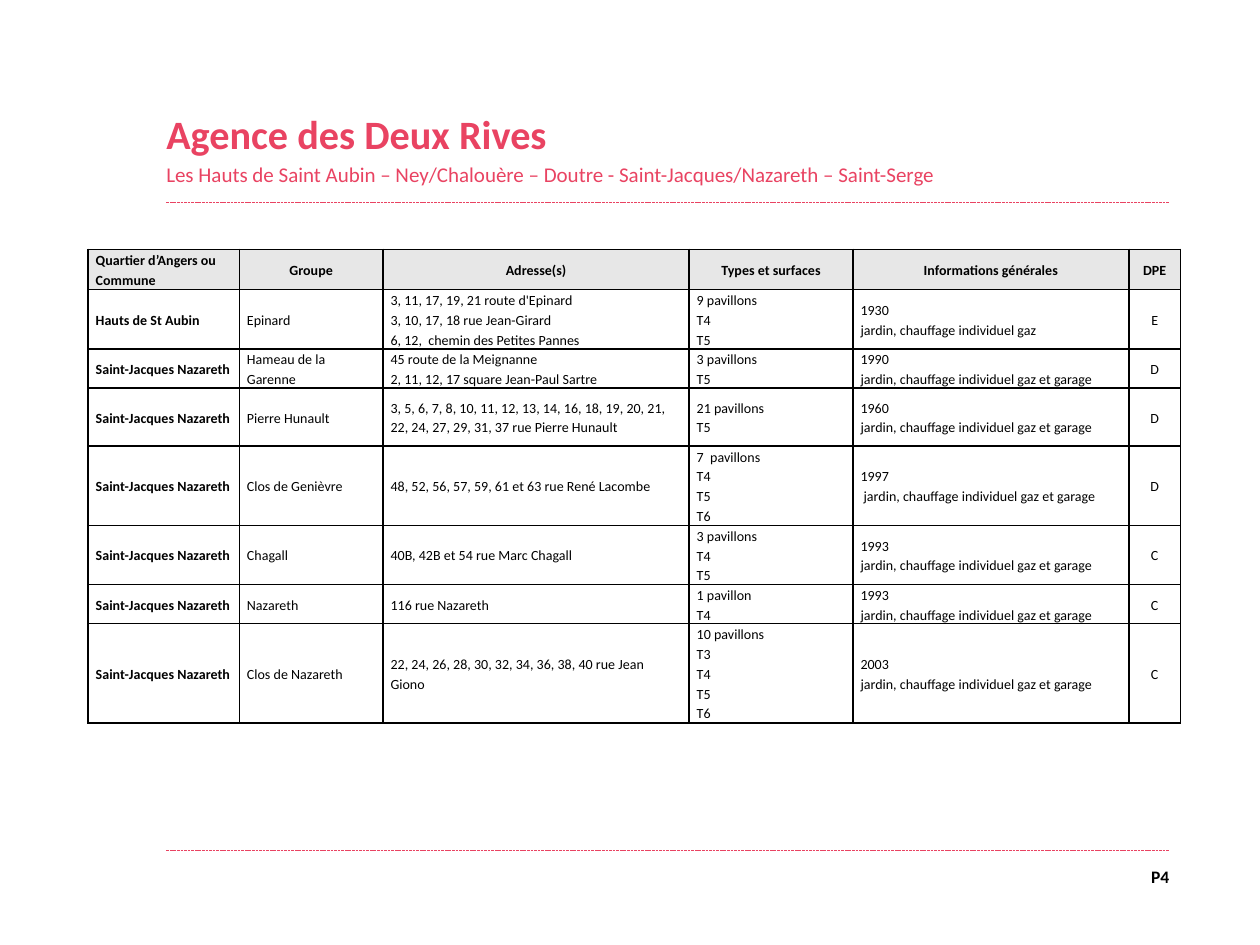
import lxml.etree
import pptx
import pptx.dml.color
import pptx.enum.dml
import pptx.enum.shapes
import pptx.enum.text
import pptx.oxml
import pptx.oxml.ns
import pptx.util

Inches = pptx.util.Inches
Pt = pptx.util.Pt
Align = pptx.enum.text.PP_ALIGN
Anchor = pptx.enum.text.MSO_ANCHOR

PINK, BLACK, GREY = "E94362", "000000", "E7E7E7"
FONT = "Calibri"
COLUMN_WIDTHS = [1.2, 1.14, 2.43, 1.3, 2.19, 0.41]
ROW_HEIGHTS = [0.32, 0.47, 0.31, 0.46, 0.63, 0.47, 0.31, 0.79]
DISTRICT = "Saint-Jacques Nazareth"
AMENITIES = "jardin, chauffage individuel gaz et garage"
HEADERS = ["Quartier d’Angers ou Commune", "Groupe", "Adresse(s)",
           "Types et surfaces", "Informations générales", "DPE"]
HOUSING = [
    ["Hauts de St Aubin", "Epinard",
     "3, 11, 17, 19, 21 route d'Epinard\n3, 10, 17, 18 rue Jean-Girard\n"
     "6, 12,  chemin des Petites Pannes",
     "9 pavillons\nT4\nT5", "1930\njardin, chauffage individuel gaz", "E"],
    [DISTRICT, "Hameau de la Garenne",
     "45 route de la Meignanne\n2, 11, 12, 17 square Jean-Paul Sartre",
     "3 pavillons\nT5", f"1990\n{AMENITIES}", "D"],
    [DISTRICT, "Pierre Hunault",
     "3, 5, 6, 7, 8, 10, 11, 12, 13, 14, 16, 18, 19, 20, 21, "
     "22, 24, 27, 29, 31, 37 rue Pierre Hunault",
     "21 pavillons\nT5", f"1960\n{AMENITIES}", "D"],
    [DISTRICT, "Clos de Genièvre", "48, 52, 56, 57, 59, 61 et 63 rue René Lacombe",
     "7  pavillons\nT4\nT5\nT6", f"1997\n {AMENITIES}", "D"],
    [DISTRICT, "Chagall", "40B, 42B et 54 rue Marc Chagall",
     "3 pavillons\nT4\nT5", f"1993\n{AMENITIES}", "C"],
    [DISTRICT, "Nazareth", "116 rue Nazareth",
     "1 pavillon\nT4", f"1993\n{AMENITIES}", "C"],
    [DISTRICT, "Clos de Nazareth",
     "22, 24, 26, 28, 30, 32, 34, 36, 38, 40 rue Jean Giono",
     "10 pavillons\nT3\nT4\nT5\nT6", f"2003\n{AMENITIES}", "C"],
]


def colour(value):
    return pptx.dml.color.RGBColor.from_string(value)


def write(para, text, size, bold=False, tint=BLACK, align=Align.LEFT, spacing=None, before=0):
    para.alignment = align
    para.line_spacing = spacing
    if before:
        para.space_before = Pt(before)
    span = para.add_run()
    span.text = text
    span.font.name = FONT
    span.font.size = Pt(size)
    span.font.bold = bold
    span.font.color.rgb = colour(tint)


def add_text_frame(page, left, top, width, height, anchor=Anchor.TOP):
    box = page.shapes.add_textbox(Inches(left), Inches(top), Inches(width), Inches(height))
    frame = box.text_frame
    frame.word_wrap = True
    frame.vertical_anchor = anchor
    frame.margin_left = frame.margin_right = frame.margin_top = frame.margin_bottom = 0
    return frame


def add_rule(page, left, top, width):
    rule = page.shapes.add_connector(
        pptx.enum.shapes.MSO_CONNECTOR.STRAIGHT,
        Inches(left), Inches(top), Inches(left + width), Inches(top))
    rule.line.color.rgb = colour(PINK)
    rule.line.width = Pt(0.5)
    rule.line.dash_style = pptx.enum.dml.MSO_LINE.SQUARE_DOT
    lxml.etree.SubElement(rule.element.spPr, pptx.oxml.ns.qn("a:effectLst"))


def add_heading(page, left, top, width, height):
    frame = add_text_frame(page, left, top, width, height, Anchor.BOTTOM)
    write(frame.paragraphs[0], "Agence des Deux Rives", 23, bold=True, tint=PINK)
    write(frame.add_paragraph(),
          "Les Hauts de Saint Aubin – Ney/Chalouère – Doutre - "
          "Saint-Jacques/Nazareth – Saint-Serge", 12, tint=PINK, before=2.4)


def add_page_number(page, left, top, width, height):
    frame = add_text_frame(page, left, top, width, height)
    write(frame.paragraphs[0], "P4", 10, bold=True, align=Align.RIGHT)


def add_borders(cell):
    properties = cell._tc.get_or_add_tcPr()
    for position, side in enumerate(("lnL", "lnR", "lnT", "lnB")):
        properties.insert(position, pptx.oxml.parse_xml(
            f'<a:{side} {pptx.oxml.ns.nsdecls("a")} w="{Pt(1)}"><a:solidFill>'
            f'<a:srgbClr val="{BLACK}"/></a:solidFill></a:{side}>'))


def fill_cell(cell, text, bold, align, background):
    cell.vertical_anchor = Anchor.MIDDLE
    cell.margin_left = cell.margin_right = Inches(0.06)
    cell.margin_top = cell.margin_bottom = 0
    if background:
        cell.fill.solid()
        cell.fill.fore_color.rgb = colour(background)
    else:
        cell.fill.background()
    add_borders(cell)
    frame = cell.text_frame
    for number, line in enumerate(text.split("\n")):
        para = frame.add_paragraph() if number else frame.paragraphs[0]
        write(para, line, 8, bold=bold, align=align, spacing=1.15)


def add_housing_table(page, left, top):
    rows = [HEADERS] + HOUSING
    table = page.shapes.add_table(
        len(rows), len(HEADERS), Inches(left), Inches(top),
        Inches(sum(COLUMN_WIDTHS)), Inches(sum(ROW_HEIGHTS))).table
    table.horz_banding = False
    for column, width in zip(table.columns, COLUMN_WIDTHS):
        column.width = Inches(width)
    last = len(HEADERS) - 1
    for r, (texts, height) in enumerate(zip(rows, ROW_HEIGHTS)):
        table.rows[r].height = Inches(height)
        header = r == 0
        for c, text in enumerate(texts):
            centred = c == last or (header and c > 0)
            fill_cell(table.cell(r, c), text, bold=header or c == 0,
                      align=Align.CENTER if centred else Align.LEFT,
                      background=GREY if header else None)


def main():
    deck = pptx.Presentation()
    deck.slide_width, deck.slide_height = Inches(10), Inches(7.5)
    page = deck.slides.add_slide(deck.slide_layouts[6])
    for top in (1.61, 6.75):
        add_rule(page, 1.32, top, 7.96)
    add_page_number(page, 8.94, 6.87, 0.34, 0.2)
    add_heading(page, 1.32, 0.73, 6.24, 0.75)
    add_housing_table(page, 0.7, 1.98)
    deck.save("out.pptx")


if __name__ == "__main__":
    main()
